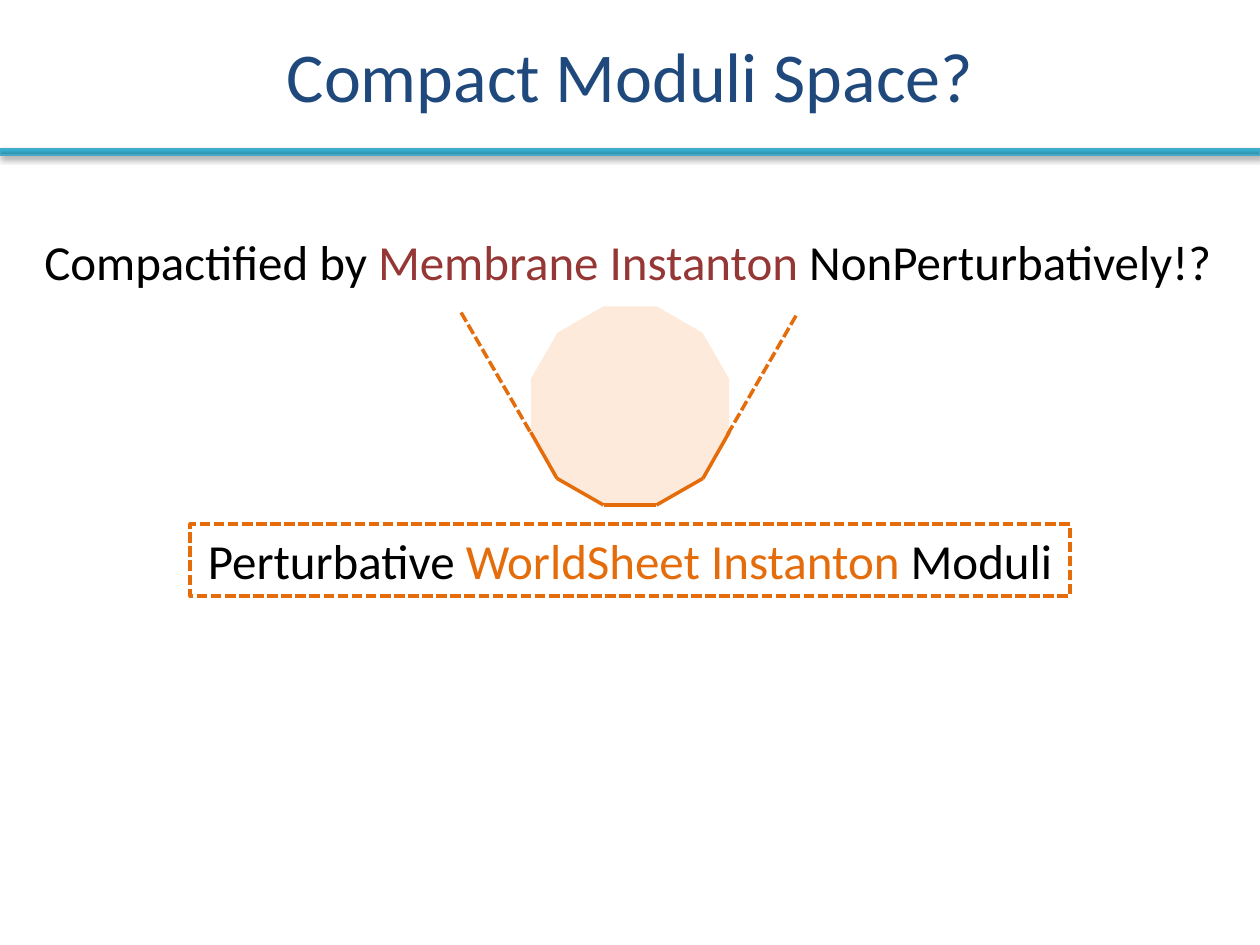
"""Build the slide on the compact moduli space and its instanton effects."""
from itertools import pairwise

from lxml import etree
from pptx import Presentation
from pptx.dml.color import RGBColor
from pptx.enum import dml, shapes, text
from pptx.oxml import ns
from pptx.util import Pt

BLACK = RGBColor(0x00, 0x00, 0x00)
NAVY = RGBColor(0x1F, 0x49, 0x7D)
ORANGE = RGBColor(0xE4, 0x6C, 0x0A)
PEACH = RGBColor(0xFD, 0xEA, 0xDA)
MAROON = RGBColor(0x95, 0x37, 0x35)
TEAL_DARK = RGBColor(0x2A, 0x88, 0xA2)
TEAL_LIGHT = RGBColor(0x37, 0xB1, 0xD2)
TEAL_EDGE = RGBColor(0x46, 0xAA, 0xC5)


class ModuliSlide:
    font = "Calibri"
    title_size = Pt(40)
    text_size = Pt(28)
    stroke = Pt(2)

    def __init__(self, deck):
        self.slide = deck.slides.add_slide(deck.slide_layouts[5])

    def add_runs(self, frame, runs, size):
        frame.vertical_anchor = text.MSO_ANCHOR.MIDDLE
        paragraph = frame.paragraphs[0]
        paragraph.alignment = text.PP_ALIGN.CENTER
        for words, color in runs:
            run = paragraph.add_run()
            run.text = words
            run.font.name = self.font
            run.font.size = size
            run.font.color.rgb = color

    def outline(self, line, dashed):
        line.color.rgb = ORANGE
        line.width = self.stroke
        if dashed:
            line.dash_style = dml.MSO_LINE.SQUARE_DOT

    def title(self, words, left, top, width, height):
        heading = self.slide.shapes.title
        heading.left, heading.top = Pt(left), Pt(top)
        heading.width, heading.height = Pt(width), Pt(height)
        self.add_runs(heading.text_frame, [(words, NAVY)], self.title_size)

    def shape(self, kind, left, top, width, height):
        added = self.slide.shapes.add_shape(
            kind, Pt(left), Pt(top), Pt(width), Pt(height))
        added.shadow.inherit = False
        return added

    def rule(self, *place):
        bar = self.shape(shapes.MSO_SHAPE.RECTANGLE, *place)
        bar.fill.gradient()
        bar.fill.gradient_angle = 90
        stops = zip(bar.fill.gradient_stops, (0, 0.8), (TEAL_DARK, TEAL_LIGHT))
        for stop, position, color in stops:
            stop.position = position
            stop.color.rgb = color
        bar.line.color.rgb = TEAL_EDGE
        bar.line.width = Pt(0.75)
        effects = bar._element.spPr.find(ns.qn("a:effectLst"))
        shadow = etree.SubElement(
            effects, ns.qn("a:outerShdw"), blurRad=str(Pt(3.1)),
            dist=str(Pt(1.8)), dir="5400000", rotWithShape="0")
        black = etree.SubElement(shadow, ns.qn("a:srgbClr"), val="000000")
        etree.SubElement(black, ns.qn("a:alpha"), val="35000")

    def region(self, *place):
        dodecagon = self.shape(shapes.MSO_SHAPE.DODECAGON, *place)
        dodecagon.fill.solid()
        dodecagon.fill.fore_color.rgb = PEACH
        dodecagon.line.fill.background()

    def framed(self, runs, *place):
        box = self.shape(shapes.MSO_SHAPE.RECTANGLE, *place)
        box.fill.background()
        self.outline(box.line, dashed=True)
        self.add_runs(box.text_frame, runs, self.text_size)

    def statement(self, runs, left, top, width, height):
        box = self.slide.shapes.add_textbox(
            Pt(left), Pt(top), Pt(width), Pt(height))
        box.text_frame.word_wrap = False
        self.add_runs(box.text_frame, runs, self.text_size)

    def line(self, start, end, dashed=False):
        edge = self.slide.shapes.add_connector(
            shapes.MSO_CONNECTOR.STRAIGHT, *map(Pt, start + end))
        self.outline(edge.line, dashed)
        etree.SubElement(edge._element.spPr, ns.qn("a:effectLst"))


def main():
    deck = Presentation()
    deck.slide_width, deck.slide_height = Pt(720), Pt(540)
    page = ModuliSlide(deck)
    page.rule(0, 85, 720, 3.6)
    page.title("Compact Moduli Space?", 0, 0, 720, 85)
    page.region(303.4, 175, 113.2, 113.2)
    page.line((263.5, 178.6), (303.5, 247.7), dashed=True)
    page.line((415.7, 248.4), (455.5, 179.3), dashed=True)
    page.framed([("Perturbative ", BLACK), ("WorldSheet Instanton ", ORANGE),
                 ("Moduli", BLACK)], 108.7, 299.5, 502.6, 41.2)
    page.statement([("Compactified by ", BLACK),
                    ("Membrane Instanton ", MAROON),
                    ("NonPerturbatively!?", BLACK)], 14.2, 128.2, 689, 41.2)
    left_half = [(303.3, 247), (318.3, 273.4), (344.9, 288.6)]
    right_half = [(720 - x, y) for x, y in reversed(left_half)]
    for start, end in pairwise(left_half + right_half):
        page.line(start, end)
    deck.save("out.pptx")


if __name__ == "__main__":
    main()
